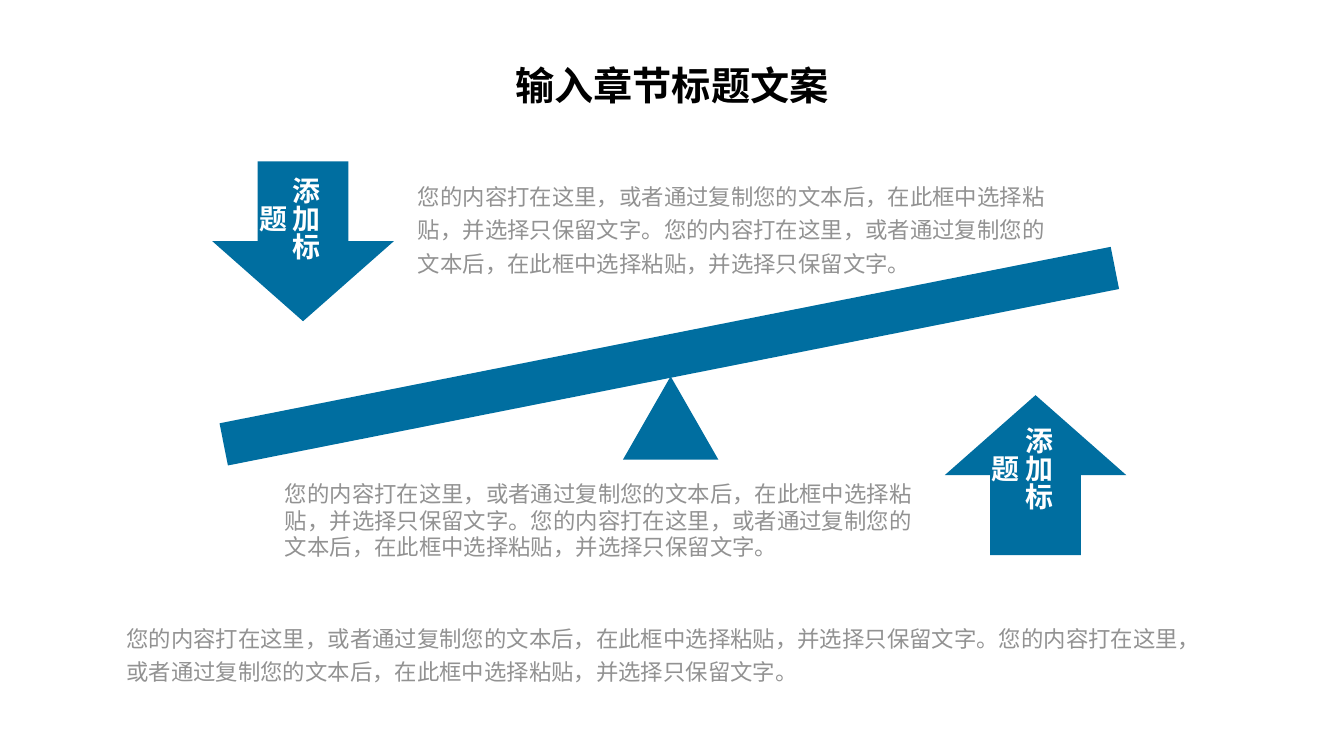
from pptx import Presentation
from pptx.dml.color import RGBColor
from pptx.enum.shapes import MSO_SHAPE as Preset
from pptx.enum.text import MSO_AUTO_SIZE as AutoSize, PP_ALIGN as Align
from pptx.oxml.ns import qn
from pptx.util import Inches, Pt

COLORS = {"blue": "006EA0", "gray": "929292", "white": "FFFFFF", "black": "000000"}
FONT = "Noto Sans CJK SC"
SENTENCE = "您的内容打在这里，或者通过复制您的文本后，在此框中选择粘贴，并选择只保留文字。"
BODY = SENTENCE * 2
BODY_INSETS = {"margin_left": 0.07, "margin_right": 0.07,
               "margin_top": 0.04, "margin_bottom": 0.04}


def add_text(slide, box, words, color, size, bold=False, align=None,
             spacing=None, insets=None, vertical=False):
    frame = slide.shapes.add_textbox(*map(Inches, box)).text_frame
    frame.word_wrap = True
    frame.auto_size = AutoSize.SHAPE_TO_FIT_TEXT
    for margin, inset in (insets or {}).items():
        setattr(frame, margin, Inches(inset))
    if vertical:
        frame._txBody.bodyPr.set("vert", "eaVert")
    paragraph = frame.paragraphs[0]
    for name, value in {"alignment": align, "line_spacing": spacing}.items():
        setattr(paragraph, name, value)
    run = paragraph.add_run()
    run.text = words
    for name, value in {"name": FONT, "size": Pt(size), "bold": bold}.items():
        setattr(run.font, name, value)
    run.font.color.rgb = RGBColor.from_string(COLORS[color])
    east_asian = run._r.get_or_add_rPr().makeelement(qn("a:ea"), {"typeface": FONT})
    run.font._element.find(qn("a:latin")).addnext(east_asian)


def add_body(slide, box, spacing=None):
    add_text(slide, box, BODY, "gray", 12, spacing=spacing, insets=BODY_INSETS)


def add_solid(slide, preset, box, rotation=0):
    solid = slide.shapes.add_shape(preset, *map(Inches, box))
    solid.shadow.inherit = False
    solid.fill.solid()
    solid.fill.fore_color.rgb = RGBColor.from_string(COLORS["blue"])
    solid.line.fill.background()
    solid.rotation = rotation


def add_labelled_arrow(slide, preset, left, top, label_drop):
    """Draw a block arrow with a vertical label starting label_drop below its top."""
    width, height, label_width = 1.35, 1.19, 0.45
    add_solid(slide, preset, (left, top, width, height))
    label_left = left + (width - label_width) / 2 - 0.03
    add_text(slide, (label_left, top + label_drop, label_width, 1.02), "添加标题",
             "white", 15, bold=True, align=Align.CENTER, vertical=True)


def add_seesaw(slide, left, top, width):
    beam_height, pivot_width = 0.32, 0.71
    add_solid(slide, Preset.RECTANGLE, (left, top, width, beam_height), rotation=348.8)
    pivot_left = left + (width - pivot_width) / 2 + 0.01
    add_solid(slide, Preset.ISOSCELES_TRIANGLE,
              (pivot_left, top + beam_height - 0.01, pivot_width, 0.62))


def build_seesaw_slide(slide):
    add_body(slide, (3.04, 1.27, 4.87, 0.81), spacing=1.25)
    add_body(slide, (2.05, 3.53, 4.96, 0.68))
    add_seesaw(slide, 1.6, 2.49, 6.76)
    add_labelled_arrow(slide, Preset.DOWN_ARROW, 1.58, 1.2, label_drop=0.02)
    add_labelled_arrow(slide, Preset.UP_ARROW, 7.03, 2.94, label_drop=0.14)
    add_body(slide, (0.87, 4.56, 8.24, 0.56), spacing=1.25)
    add_text(slide, (3.42, 0.41, 3.16, 0.45), "输入章节标题文案",
             "black", 21, bold=True, align=Align.CENTER)


def main():
    deck = Presentation()
    deck.slide_width = Inches(10)
    deck.slide_height = deck.slide_width * 9 // 16
    build_seesaw_slide(deck.slides.add_slide(deck.slide_layouts[6]))
    deck.save("out.pptx")


if __name__ == "__main__":
    main()
